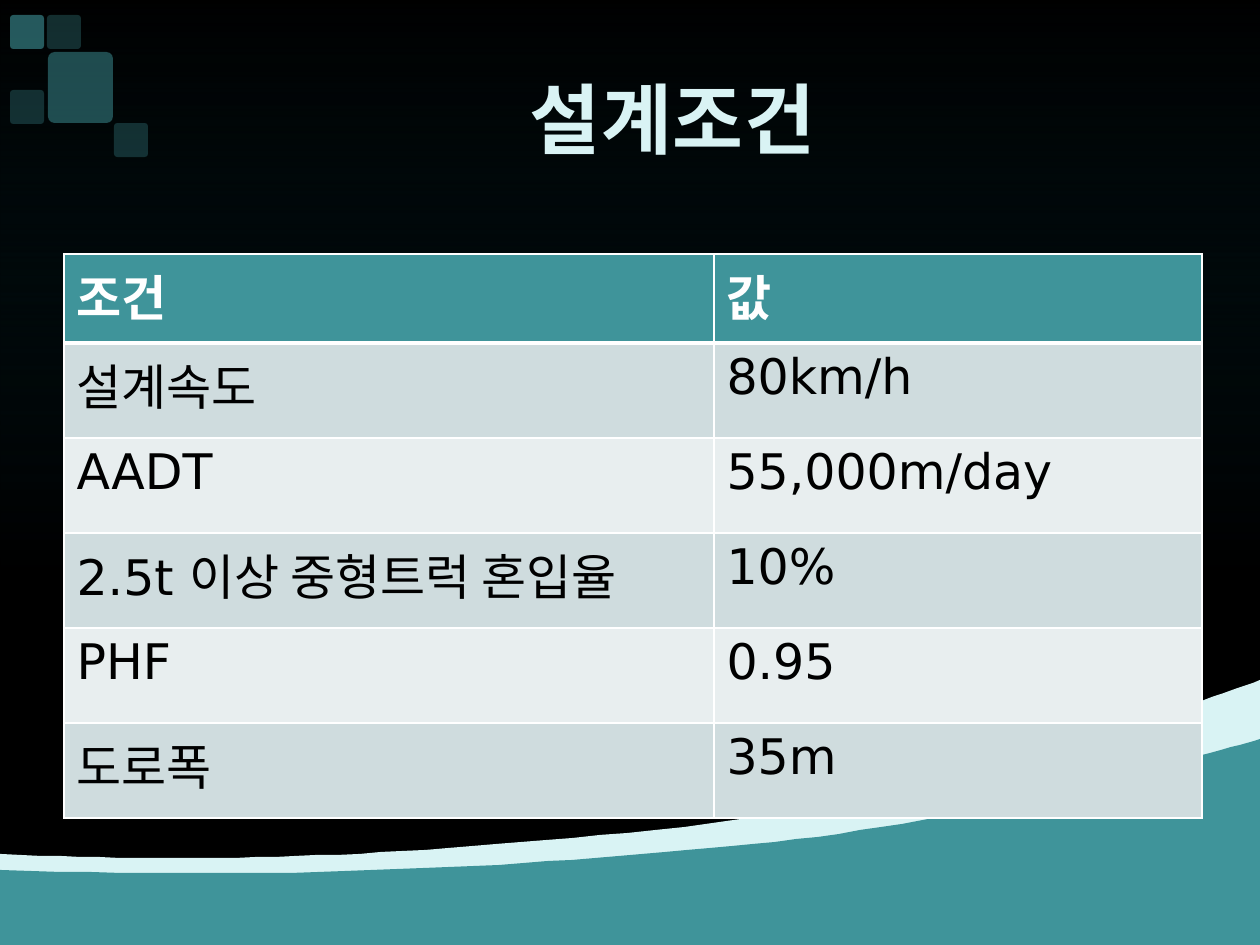
from lxml.etree import SubElement
from pptx import Presentation
from pptx.dml.color import RGBColor
from pptx.enum.shapes import MSO_SHAPE as SHAPE
from pptx.enum.text import MSO_ANCHOR as ANCHOR, PP_ALIGN as ALIGN
from pptx.oxml.ns import qn
from pptx.util import Emu, Pt

EMU_PER_PX = 914400 / 126
WIDTH, HEIGHT = 1260, 945
COLORS = {
    "black": "000000", "white": "FFFFFF", "teal": "3F949A", "deep": "005466",
    "mint": "D9F3F4", "mint_dim": "CFE8E9", "mint_grey": "A1B4B5",
    "band_dark": "CFDCDE", "band_light": "E8EEEF",
}
# Top edges: a start point, then Bezier segments (two controls and an end)
WAVES = [
    ("mint", (0, 854), [((203, 863), (369, 859), (656, 830)),
                        ((944, 801), (1194, 704), (1260, 680))]),
    ("teal", (0, 870), [((310, 881), (561, 864), (775, 842)),
                        ((988, 818), (1208, 754), (1260, 739))]),
]
# left, top, width, height, opacity in percent
SQUARES = [
    (47, 15, 34, 34, 30), (10, 90, 34, 34, 30), (10, 15, 34, 34, 60),
    (114, 123, 34, 34, 30), (48, 52, 65, 71, 50),
]
ROWS = [
    ("조건", "값"),
    ("설계속도", "80km/h"),
    ("AADT", "55,000m/day"),
    ("2.5t 이상 중형트럭 혼입율", "10%"),
    ("PHF", "0.95"),
    ("도로폭", "35m"),
]
COL_WIDTHS = (650, 488)
HEAD_HEIGHT, ROW_HEIGHT = 89, 95


def px(n):
    return Emu(round(n * EMU_PER_PX))


def box(*lengths):
    return [px(n) for n in lengths]


def rgb(name):
    return RGBColor.from_string(COLORS[name])


def set_format(target, values):
    for name, value in values.items():
        setattr(target, name, value)


def set_solid(fill, color):
    fill.solid()
    fill.fore_color.rgb = rgb(color)


def set_alpha(color_el, percent):
    SubElement(color_el, qn("a:alpha"), val=str(percent * 1000))


def set_gradient(fill, parent, stops):
    """Fill downwards with (position, colour, opacity) stops, all in percent."""
    fill.gradient()
    fill.gradient_angle = 270
    gs_list = parent.find(qn("a:gradFill")).find(qn("a:gsLst"))
    for old in list(gs_list):
        gs_list.remove(old)
    for pos, color, alpha in stops:
        gs = SubElement(gs_list, qn("a:gs"), pos=str(pos * 1000))
        color_el = SubElement(gs, qn("a:srgbClr"), val=COLORS[color])
        if alpha < 100:
            set_alpha(color_el, alpha)


def make_plain(sp):
    sp.shadow.inherit = False
    sp.line.fill.background()


def add_backdrop(slide):
    set_solid(slide.background.fill, "black")
    sp = slide.shapes.add_shape(SHAPE.RECTANGLE, *box(0, 0, WIDTH, HEIGHT))
    make_plain(sp)
    set_gradient(sp.fill, sp._element.spPr,
                 [(0, "deep", 0), (61, "black", 40)])


def bezier(p0, p1, p2, p3, steps=30):
    """Points along a cubic curve, without its start."""
    for i in range(1, steps + 1):
        t = i / steps
        u = 1 - t
        yield tuple(u**3 * a + 3 * u * u * t * b + 3 * u * t * t * c + t**3 * d
                    for a, b, c, d in zip(p0, p1, p2, p3))


def add_wave(slide, color, start, segments):
    points = [start]
    for segment in segments:
        points += bezier(points[-1], *segment)
    points += [(WIDTH, HEIGHT), (0, HEIGHT)]
    builder = slide.shapes.build_freeform(*start, scale=EMU_PER_PX)
    builder.add_line_segments(points[1:], close=True)
    sp = builder.convert_to_shape()
    make_plain(sp)
    set_solid(sp.fill, color)


def add_square(slide, x, y, w, h, opacity):
    sp = slide.shapes.add_shape(SHAPE.ROUNDED_RECTANGLE, *box(x, y, w, h))
    sp.adjustments[0] = 0.1
    make_plain(sp)
    set_solid(sp.fill, "teal")
    set_alpha(sp._element.spPr.find(qn("a:solidFill"))[0], opacity)


def set_borders(cell, widths):
    """Draw white borders; widths in points by side, before any fill is set."""
    tc_pr = cell._tc.get_or_add_tcPr()
    for side, width in widths.items():
        ln = SubElement(tc_pr, qn("a:ln" + side), w=str(Pt(width)))
        fill = SubElement(ln, qn("a:solidFill"))
        SubElement(fill, qn("a:srgbClr"), val=COLORS["white"])


def fill_cell(cell, text, row):
    head = row == 0
    set_borders(cell, {"L": 1, "R": 1, "T": 3 if row == 1 else 1,
                       "B": 3 if head else 1})
    band = "band_dark" if row % 2 else "band_light"
    set_solid(cell.fill, "teal" if head else band)
    r = cell.text_frame.paragraphs[0].add_run()
    r.text = text
    set_format(r.font, {"size": Pt(28), "name": "DejaVu Sans", "bold": head})
    r.font.color.rgb = rgb("white" if head else "black")


def add_conditions_table(slide):
    heights = [HEAD_HEIGHT] + [ROW_HEIGHT] * (len(ROWS) - 1)
    frame = slide.shapes.add_table(
        len(ROWS), len(COL_WIDTHS),
        *box(64, 254, sum(COL_WIDTHS), sum(heights)))
    table = frame.table
    for col, width in zip(table.columns, COL_WIDTHS):
        col.width = px(width)
    for i, (texts, height) in enumerate(zip(ROWS, heights)):
        table.rows[i].height = px(height)
        for j, text in enumerate(texts):
            fill_cell(table.cell(i, j), text, i)


def set_title(slide, text):
    title = slide.shapes.title
    slide.shapes._spTree.append(title._element)  # bring to the front
    left, top, width, height = box(158, 49, 1029, 137)
    set_format(title, {"left": left, "top": top,
                       "width": width, "height": height})
    tf = title.text_frame
    set_format(tf, {"vertical_anchor": ANCHOR.MIDDLE, "word_wrap": True})
    p = tf.paragraphs[0]
    p.alignment = ALIGN.CENTER
    r = p.add_run()
    r.text = text
    r_pr = r._r.get_or_add_rPr()
    r_pr.set("spc", "50")
    set_gradient(r.font.fill, r_pr, [
        (0, "mint", 100), (26, "mint", 100), (41, "mint_dim", 100),
        (67, "mint_grey", 100), (95, "mint", 100)])
    set_format(r.font, {"size": Pt(44), "name": "TeX Gyre Schola",
                        "bold": True})


def main():
    prs = Presentation()
    prs.slide_width, prs.slide_height = box(WIDTH, HEIGHT)
    slide = prs.slides.add_slide(prs.slide_layouts[5])
    add_backdrop(slide)
    for wave in WAVES:
        add_wave(slide, *wave)
    for square in SQUARES:
        add_square(slide, *square)
    add_conditions_table(slide)
    set_title(slide, "설계조건")
    prs.save("out.pptx")


if __name__ == "__main__":
    main()
